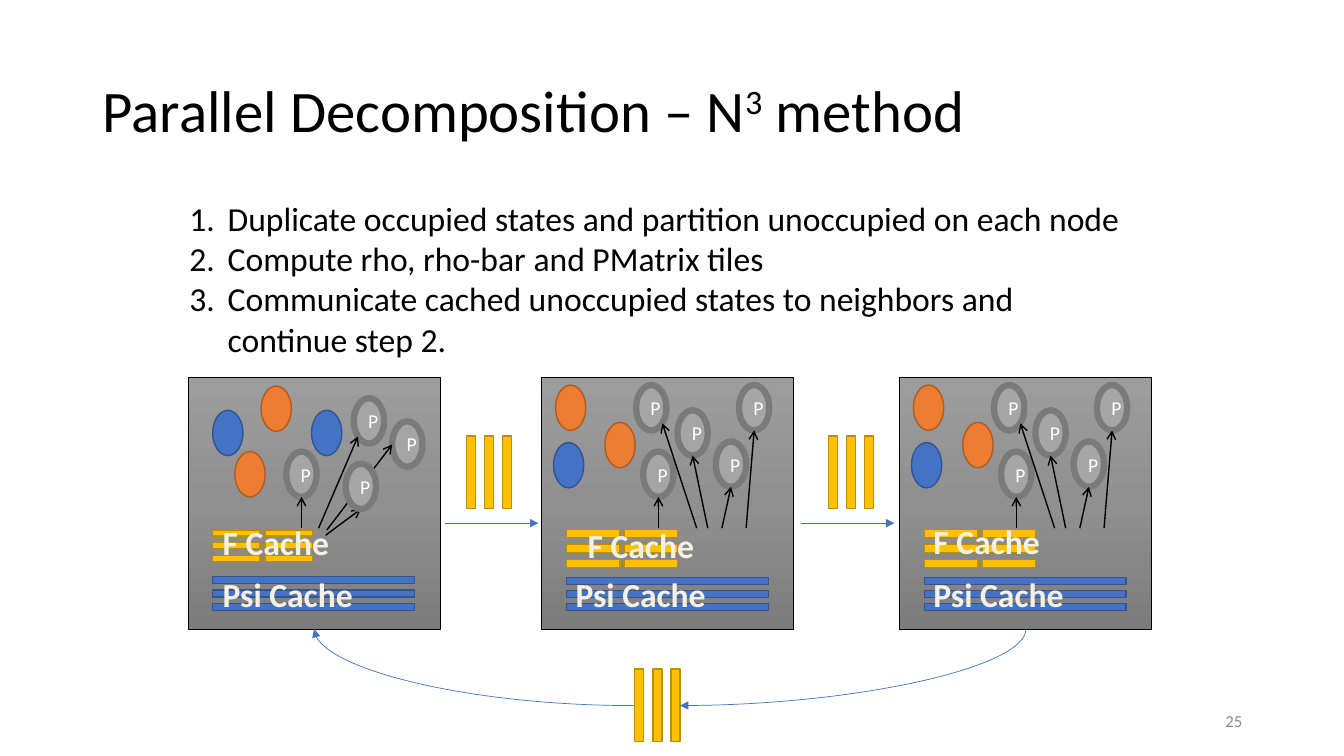
import copy

import lxml.etree
import pptx
import pptx.dml.color
import pptx.enum.shapes
import pptx.enum.text
import pptx.oxml.ns
import pptx.util

Inches = pptx.util.Inches
Pt = pptx.util.Pt
qn = pptx.oxml.ns.qn
SHAPE = pptx.enum.shapes.MSO_SHAPE
CONNECTOR = pptx.enum.shapes.MSO_CONNECTOR
ANCHOR = pptx.enum.text.MSO_ANCHOR
ALIGN = pptx.enum.text.PP_ALIGN

COLORS = {
    "black": "000000", "white": "FFFFFF", "page number": "8C8C8C",
    "blue": "4472C4", "blue edge": "325491",
    "orange": "ED7D31", "orange edge": "AF5C24",
    "gold": "FFC000", "gold edge": "BD8E00",
    "gray": "A5A5A5", "gray edge": "7A7A7A",
    "cache": "F4F1E3", "psi outline": "054697", "f outline": "403152",
    "node top": "9D9D9D", "node middle": "909090", "node bottom": "7C7C7C",
}
STEPS = [
    "Duplicate occupied states and partition unoccupied on each node",
    "Compute rho, rho-bar and PMatrix tiles",
    "Communicate cached unoccupied states to neighbors and continue step 2.",
]
NODE_TOP, NODE_SIZE = 3.74, 2.5
STATE_SIZE = (0.3, 0.45)

# Positions inside a node, from its top left corner.
FIRST_NODE = {
    "blue": [(0.24, 0.33), (1.22, 0.33)],
    "orange": [(0.72, 0.09), (0.46, 0.74)],
    "tiles": [(1.64, 0.21), (2.02, 0.44), (0.97, 0.74)],
    "front tiles": [(1.56, 0.86)],
    "f bars": {"lefts": (0.24, 0.76), "top": 1.52, "pitch": 0.125, "size": (0.47, 0.06)},
    "psi bars": {"lefts": (0.24,), "top": 1.98, "pitch": 0.135, "size": (2, 0.07)},
    "arrows": [(1.12, 1.5, 1.12, 1.19), (1.29, 1.5, 1.68, 0.59),
               (1.36, 1.57, 1.71, 1.31), (1.37, 1.52, 2.02, 0.67)],
}
LATER_NODE = {
    "blue": [(0.12, 0.65)],
    "orange": [(0.14, 0.08), (0.63, 0.45)],
    "tiles": [(1.35, 0.33), (1.96, 0.08), (1.01, 0.74), (1.73, 0.64), (0.94, 0.08)],
    "front tiles": [],
    "f bars": {"lefts": (0.25, 0.82), "top": 1.51, "pitch": 0.15, "size": (0.53, 0.08)},
    "psi bars": {"lefts": (0.25,), "top": 1.99, "pitch": 0.13, "size": (2, 0.07)},
    "arrows": [(1.16, 1.5, 1.16, 1.19), (1.54, 1.5, 1.2, 0.46), (1.65, 1.5, 1.5, 0.78),
               (1.79, 1.5, 1.88, 1.09), (2.03, 1.5, 2.11, 0.53)],
}
# Left edge, layout and place of the F Cache label of each node.
NODES = [(1.87, FIRST_NODE, (0.24, 1.39)),
         (5.37, LATER_NODE, (0.36, 1.42)),
         (8.92, LATER_NODE, (0.24, 1.38))]


def color(name):
    return pptx.dml.color.RGBColor.from_string(COLORS[name])


def style_run(span, size, name, bold=False):
    span.font.name = "Calibri"
    span.font.size = Pt(size)
    span.font.bold = bold
    span.font.color.rgb = color(name)


def add_solid(shapes, kind, left, top, size, name, weight=1):
    solid = shapes.add_shape(kind, Inches(left), Inches(top), Inches(size[0]), Inches(size[1]))
    solid.shadow.inherit = False
    solid.fill.solid()
    solid.fill.fore_color.rgb = color(name)
    solid.line.color.rgb = color(name + " edge")
    solid.line.width = Pt(weight)
    return solid


def add_text(shapes, box, lines, size, name, anchor=ANCHOR.TOP, bold=False):
    frame = shapes.add_textbox(*(Inches(length) for length in box)).text_frame
    frame.word_wrap = True
    frame.vertical_anchor = anchor
    frame.text = "\n".join(lines)
    for para in frame.paragraphs:
        for span in para.runs:
            style_run(span, size, name, bold)
    return frame


def add_arrow(shapes, points, name, weight, head, kind=CONNECTOR.STRAIGHT):
    arrow = shapes.add_connector(kind, *(Inches(value) for value in points))
    arrow.line.color.rgb = color(name)
    arrow.line.width = Pt(weight)
    lxml.etree.SubElement(arrow.line._get_or_add_ln(), qn("a:tailEnd"), type=head)
    lxml.etree.SubElement(arrow.element.spPr, qn("a:effectLst"))
    return arrow


def add_curve(shapes, start, width, height, turn):
    """Quarter curve; width and height are those before turning by turn degrees."""
    middle_x, middle_y = start
    points = (middle_x - width / 2, middle_y - height / 2,
              middle_x + width / 2, middle_y + height / 2)
    curve = add_arrow(shapes, points, "blue", 0.5, "triangle", CONNECTOR.CURVE)
    properties = curve.element.spPr
    properties.find(qn("a:xfrm")).set("rot", str(turn * 60000))
    properties.find(qn("a:prstGeom")).set("prst", "curvedConnector2")


def add_title(slide, box):
    frame = add_text(slide.shapes, box, ["Parallel Decomposition – N"], 42, "black", ANCHOR.MIDDLE)
    para = frame.paragraphs[0]
    para.line_spacing = 0.9
    for words in ("3", " method"):
        span = para.add_run()
        span.text = words
        style_run(span, 42, "black")
    para.runs[1].font._element.set("baseline", "30000")


def add_steps(slide, box):
    frame = add_text(slide.shapes, box, STEPS, 24, "black")
    for para in frame.paragraphs:
        properties = para._p.get_or_add_pPr()
        properties.set("marL", str(Inches(0.38)))
        properties.set("indent", str(-Inches(0.38)))
        lxml.etree.SubElement(properties, qn("a:buFont"), typeface="+mj-lt")
        lxml.etree.SubElement(properties, qn("a:buAutoNum"), type="arabicPeriod")


def add_page_number(slide, box):
    frame = add_text(slide.shapes, box, ["25"], 12, "page number", ANCHOR.MIDDLE)
    frame.paragraphs[0].alignment = ALIGN.RIGHT


def add_node_background(shapes, left, top):
    panel = add_solid(shapes, SHAPE.RECTANGLE, left, top, (NODE_SIZE, NODE_SIZE), "gray", 0.5)
    panel.line.color.rgb = color("black")
    panel.fill.gradient()
    panel.fill.gradient_angle = 270
    stop_list = panel.element.spPr.find(".//" + qn("a:gsLst"))
    stop_list.insert(1, copy.deepcopy(stop_list[0]))
    names = ("node top", "node middle", "node bottom")
    for stop, position, name in zip(panel.fill.gradient_stops, (0, 0.5, 1), names):
        stop.position = position
        stop.color.rgb = color(name)


def add_tile(shapes, left, top):
    tile = add_solid(shapes, SHAPE.OVAL, left, top, STATE_SIZE, "gray", 4.5)
    frame = tile.text_frame
    frame.text = "P"
    frame.vertical_anchor = ANCHOR.MIDDLE
    frame.paragraphs[0].alignment = ALIGN.CENTER
    style_run(frame.paragraphs[0].runs[0], 14, "white")


def add_cache_label(shapes, box, words, outline):
    frame = add_text(shapes, box, [words], 24, "cache", ANCHOR.MIDDLE, bold=True)
    frame.word_wrap = False
    frame.auto_size = pptx.enum.text.MSO_AUTO_SIZE.SHAPE_TO_FIT_TEXT
    edge = lxml.etree.Element(qn("a:ln"), w=str(Pt(1)))
    fill = lxml.etree.SubElement(edge, qn("a:solidFill"))
    lxml.etree.SubElement(fill, qn("a:srgbClr"), val=COLORS[outline])
    frame.paragraphs[0].runs[0].font._element.insert(0, edge)


def add_node(slide, left, top, layout, f_label):
    shapes = slide.shapes.add_group_shape().shapes
    add_node_background(shapes, left, top)
    for name in ("blue", "orange"):
        for x, y in layout[name]:
            add_solid(shapes, SHAPE.OVAL, left + x, top + y, STATE_SIZE, name)
    for x, y in layout["tiles"]:
        add_tile(shapes, left + x, top + y)
    for key, name in (("psi bars", "blue"), ("f bars", "gold")):
        bars = layout[key]
        for x in bars["lefts"]:
            for row in range(3):
                add_solid(shapes, SHAPE.RECTANGLE, left + x,
                          top + bars["top"] + row * bars["pitch"], bars["size"], name)
    for x1, y1, x2, y2 in layout["arrows"]:
        add_arrow(shapes, (left + x1, top + y1, left + x2, top + y2), "black", 1, "arrow")
    add_cache_label(shapes, (left + 0.24, top + 1.9, 1.51, 0.5), "Psi Cache", "psi outline")
    add_cache_label(shapes, (left + f_label[0], top + f_label[1], 1.27, 0.5),
                    "F Cache", "f outline")
    for x, y in layout["front tiles"]:
        add_tile(shapes, left + x, top + y)


def add_moving_states(slide, left, top):
    """Three upright bars: the unoccupied states sent between nodes."""
    shapes = slide.shapes.add_group_shape().shapes
    for column in range(3):
        bar = add_solid(shapes, SHAPE.RECTANGLE, left + column * 0.18, top, (0.72, 0.09), "gold")
        bar.rotation = 90


def main():
    deck = pptx.Presentation()
    deck.slide_width, deck.slide_height = Inches(13.33), Inches(7.5)
    slide = deck.slides.add_slide(deck.slide_layouts[6])
    add_title(slide, (0.92, 0.4, 11.5, 1.45))
    add_page_number(slide, (9.42, 6.95, 3, 0.4))
    add_steps(slide, (1.78, 1.91, 9.57, 1.72))
    for left, layout, f_label in NODES:
        add_node(slide, left, NODE_TOP, layout, f_label)
    for left, top in ((7.9, 4.64), (4.31, 4.64), (5.98, 6.95)):
        add_moving_states(slide, left, top)
    add_curve(slide.shapes, (4.7, 6.62), 3.17, 0.76, 180)
    add_curve(slide.shapes, (8.46, 6.62), 0.76, 3.43, 90)
    for start in (4.41, 7.94):
        add_arrow(slide.shapes, (start, 5.19, start + 0.93, 5.19), "blue", 0.5, "triangle")
    deck.save("out.pptx")


if __name__ == "__main__":
    main()
